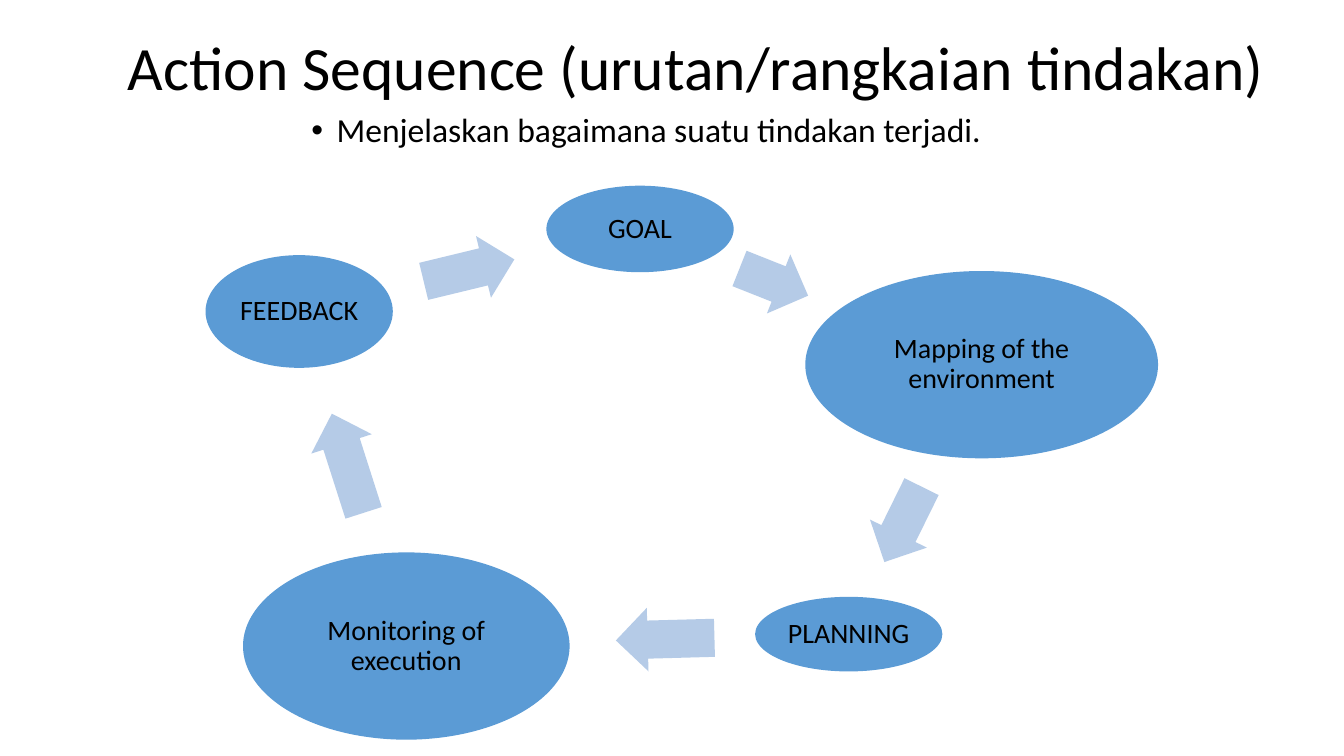
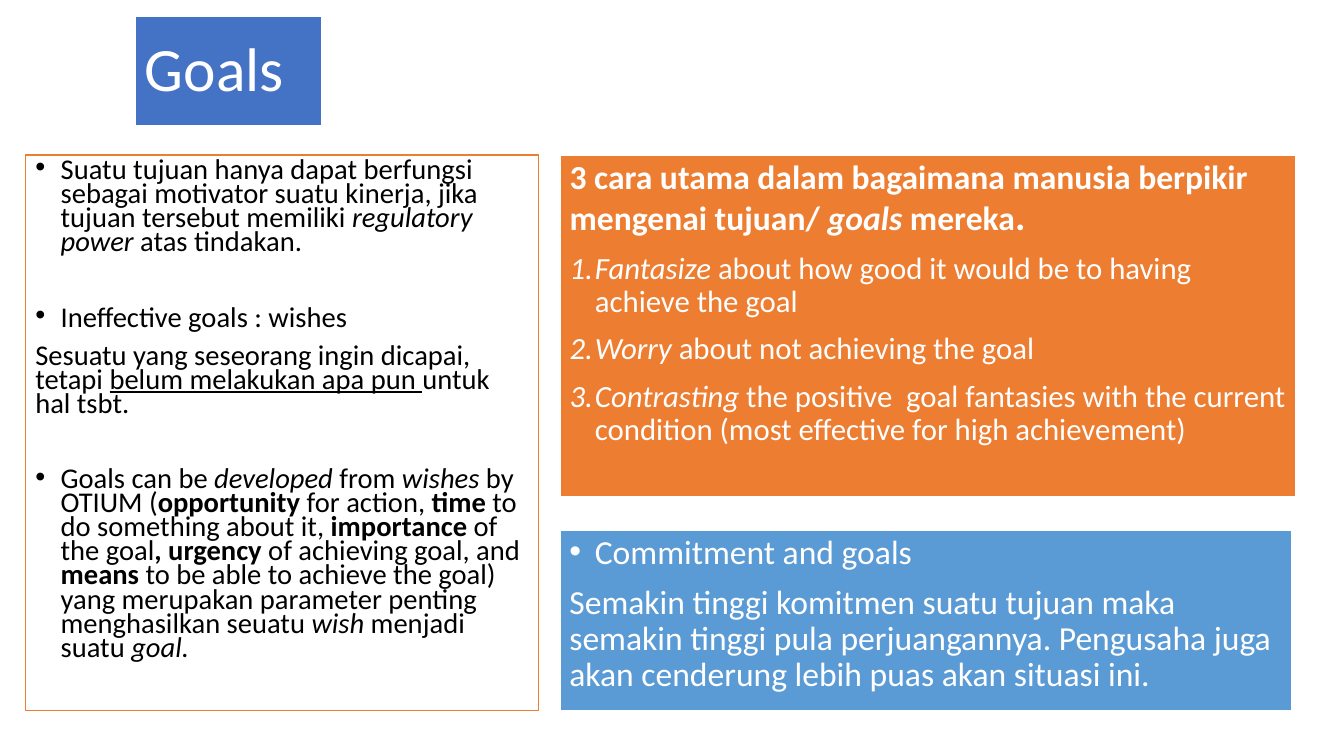
import math
from dataclasses import dataclass

from lxml import etree
from pptx import Presentation
from pptx import util as u
from pptx.dml.color import RGBColor
from pptx.enum import shapes, text
from pptx.oxml import ns

FONT = "Calibri"
BLACK = RGBColor(0x00, 0x00, 0x00)
WHITE = RGBColor(0xFF, 0xFF, 0xFF)
NAVY = RGBColor(0x44, 0x72, 0xC4)
BLUE = RGBColor(0x5B, 0x9B, 0xD5)
PALE = RGBColor(0xB5, 0xCB, 0xE7)
ORANGE = RGBColor(0xED, 0x7D, 0x31)

INDENT = u.Cm(0.64)
GAP = 10  # points between paragraphs
WIDE = 37  # points between groups of paragraphs


@dataclass
class Box:
    x: float
    y: float
    w: float
    h: float


@dataclass
class Look:
    size: float
    color: RGBColor = BLACK
    lead: float = 0.9


@dataclass
class Para:
    """A paragraph; each run is (text, flags), with flags among b, i, u."""
    runs: list[tuple[str, str]]
    mark: str = ""  # "dot", "num" or none
    gap: float = GAP
    size: float = 0  # zero keeps the size of the look


@dataclass
class Stage:
    label: str
    x: float  # centre
    y: float
    w: float
    h: float

    def reach(self, ang: float) -> float:
        """Distance from the centre to the rim of the ellipse."""
        return 1 / math.hypot(2 * math.cos(ang) / self.w,
                              2 * math.sin(ang) / self.h)


STAGES = [
    Stage("GOAL", 16.13, 5.77, 4.72, 2.18),
    Stage("Mapping of the environment", 24.74, 9.19, 8.89, 4.72),
    Stage("PLANNING", 21.39, 15.98, 4.72, 1.88),
    Stage("Monitoring of execution", 10.24, 16.28, 8.23, 4.72),
    Stage("FEEDBACK", 7.54, 7.85, 4.72, 2.84),
]

WAYS = [
    Para([("3 cara utama dalam bagaimana manusia berpikir mengenai tujuan/ ", "b"),
          ("goals", "bi"), (" mereka", "b"), (".", "b")], size=24),
    Para([("Fantasize", "i"),
          (" about how good it would be to having achieve the goal", "")], "num"),
    Para([("Worry", "i"), (" about not achieving the goal", "")], "num"),
    Para([("Contrasting", "i"),
          (" the positive  goal fantasies with the current condition "
           "(most effective for high achievement)", "")], "num"),
]

WISHES = [
    Para([("Suatu tujuan hanya dapat berfungsi sebagai motivator suatu kinerja, "
           "jika tujuan tersebut memiliki ", ""),
          ("regulatory power ", "i"), ("atas tindakan.", "")], "dot"),
    Para([("Ineffective goals : wishes", "")], "dot", WIDE),
    Para([("Sesuatu yang seseorang ingin dicapai, tetapi ", ""),
          ("belum melakukan apa pun ", "u"), ("untuk hal tsbt.", "")]),
    Para([("Goals can be ", ""), ("developed ", "i"), ("from ", ""),
          ("wishes ", "i"), ("by OTIUM (", ""), ("opportunity", "b"),
          (" for action, ", ""), ("time", "b"),
          (" to do something about it,", ""), (" importance ", "b"),
          ("of the goal", ""), (", urgency ", "b"),
          ("of achieving goal, and ", ""), ("means", "b"),
          (" to be able to achieve the goal) yang merupakan parameter penting "
           "menghasilkan seuatu ", ""),
          ("wish ", "i"), ("menjadi suatu ", ""), ("goal.", "i")], "dot", WIDE),
]

PLEDGE = [
    Para([("Commitment and goals", "")], "dot"),
    Para([("Semakin tinggi komitmen suatu tujuan maka semakin tinggi pula "
           "perjuangannya. Pengusaha juga akan cenderung lebih puas akan "
           "situasi ini.", "")]),
]


def place(shape, box: Box) -> None:
    shape.left, shape.top = u.Cm(box.x), u.Cm(box.y)
    shape.width, shape.height = u.Cm(box.w), u.Cm(box.h)


def paint(shape, fill: RGBColor, edge: RGBColor | None = None,
          width: float = 1.5) -> None:
    shape.fill.solid()
    shape.fill.fore_color.rgb = fill
    if edge is None:
        shape.line.fill.background()
    else:
        shape.line.color.rgb = edge
        shape.line.width = u.Pt(width)


def style(run, look: Look, size: float = 0, flags: str = "") -> None:
    font = run.font
    font.name, font.size = FONT, u.Pt(size or look.size)
    font.color.rgb = look.color
    font.bold, font.italic = "b" in flags, "i" in flags
    if "u" in flags:
        font.underline = True


def bullet(para, mark: str) -> None:
    props = para._p.get_or_add_pPr()
    props.set("marL", str(INDENT if mark else 0))
    props.set("indent", str(-INDENT if mark else 0))

    def add(tag: str, **attrs: str) -> None:
        etree.SubElement(props, ns.qn(tag), attrs)

    if mark == "dot":
        add("a:buFont", typeface="Arial")
        add("a:buChar", char="•")
    elif mark == "num":
        add("a:buFont", typeface="+mj-lt")
        add("a:buAutoNum", type="arabicPeriod")
    else:
        add("a:buNone")


def write(shape, paras: list[Para], look: Look) -> None:
    frame = shape.text_frame
    frame.word_wrap = True
    frame.auto_size = text.MSO_AUTO_SIZE.NONE
    for pos, item in enumerate(paras):
        para = frame.add_paragraph() if pos else frame.paragraphs[0]
        bullet(para, item.mark)
        para.line_spacing = look.lead
        para.space_before = u.Pt(item.gap if pos else 0)
        para.alignment = text.PP_ALIGN.LEFT
        for words, flags in item.runs:
            run = para.add_run()
            run.text = words
            style(run, look, item.size, flags)


def head(slide, words: str, box: Box, color: RGBColor = BLACK):
    title = slide.shapes.title
    place(title, box)
    write(title, [Para([(words, "")])], Look(44, color))
    title.text_frame.vertical_anchor = text.MSO_ANCHOR.MIDDLE
    return title


def body(slide, box: Box, paras: list[Para], look: Look):
    holder = slide.placeholders[1]
    place(holder, box)
    write(holder, paras, look)
    holder.text_frame.vertical_anchor = text.MSO_ANCHOR.TOP
    return holder


def panel(slide, box: Box, paras: list[Para], look: Look):
    shape = slide.shapes.add_textbox(0, 0, 0, 0)
    place(shape, box)
    write(shape, paras, look)
    return shape


def solid(slide, kind, x: float, y: float, w: float, h: float, fill: RGBColor):
    """Add a filled shape centred on x, y."""
    shape = slide.shapes.add_shape(kind, 0, 0, 0, 0)
    place(shape, Box(x - w / 2, y - h / 2, w, h))
    shape.shadow.inherit = False
    paint(shape, fill)
    return shape


def node(slide, stage: Stage) -> None:
    oval = solid(slide, shapes.MSO_SHAPE.OVAL, stage.x, stage.y,
                 stage.w, stage.h, BLUE)
    frame = oval.text_frame
    frame.margin_left = frame.margin_right = u.Cm(0.07)
    frame.margin_top = frame.margin_bottom = u.Cm(0.07)
    frame.vertical_anchor = text.MSO_ANCHOR.MIDDLE
    frame.word_wrap = True
    frame.text = stage.label
    para = frame.paragraphs[0]
    para.alignment = text.PP_ALIGN.CENTER
    para.line_spacing = 0.9
    style(para.runs[0], Look(20))


def arrow(slide, tail: Stage, tip: Stage) -> None:
    """Put an arrow in the gap between the rims of two stages."""
    dx, dy = tip.x - tail.x, tip.y - tail.y
    ang = math.atan2(dy, dx)
    start = tail.reach(ang)
    gap = math.hypot(dx, dy) - start - tip.reach(ang)
    mid = start + 0.485 * gap
    shape = solid(slide, shapes.MSO_SHAPE.RIGHT_ARROW,
                  tail.x + mid * math.cos(ang), tail.y + mid * math.sin(ang),
                  0.53 * gap, 1.6, PALE)
    shape.adjustments[0], shape.adjustments[1] = 0.6, 0.5
    shape.rotation = math.degrees(ang) % 360


def cycle(slide) -> None:
    head(slide, "Action Sequence (urutan/rangkaian tindakan)",
         Box(2.97, -0.05, 29.21, 3.68))
    intro = Para([("Menjelaskan bagaimana suatu tindakan terjadi.", "")], "dot")
    body(slide, Box(7.59, 2.74, 17.7, 1.78), [intro], Look(24))
    for stage, after in zip(STAGES, STAGES[1:] + STAGES[:1]):
        node(slide, stage)
        arrow(slide, stage, after)


def goals(slide) -> None:
    title = head(slide, "Goals", Box(3.4, 0.41, 4.72, 2.77), WHITE)
    paint(title, NAVY, WHITE)
    ways = body(slide, Box(14.1, 3.91, 18.57, 8.61), WAYS, Look(22, WHITE))
    ways.text_frame.paragraphs[0].runs[-1].font.size = u.Pt(28)
    paint(ways, ORANGE, WHITE)
    wishes = panel(slide, Box(0.64, 3.91, 12.93, 14), WISHES,
                   Look(20.4, lead=0.7))
    paint(wishes, WHITE, ORANGE, 1)
    pledge = panel(slide, Box(14.1, 13.36, 18.47, 4.55), PLEDGE,
                   Look(24, WHITE))
    paint(pledge, BLUE, WHITE)


def main() -> None:
    deck = Presentation()
    deck.slide_width, deck.slide_height = u.Cm(33.87), u.Cm(19.05)
    for draw in (cycle, goals):
        draw(deck.slides.add_slide(deck.slide_layouts[1]))
    deck.save("out.pptx")


if __name__ == "__main__":
    main()
